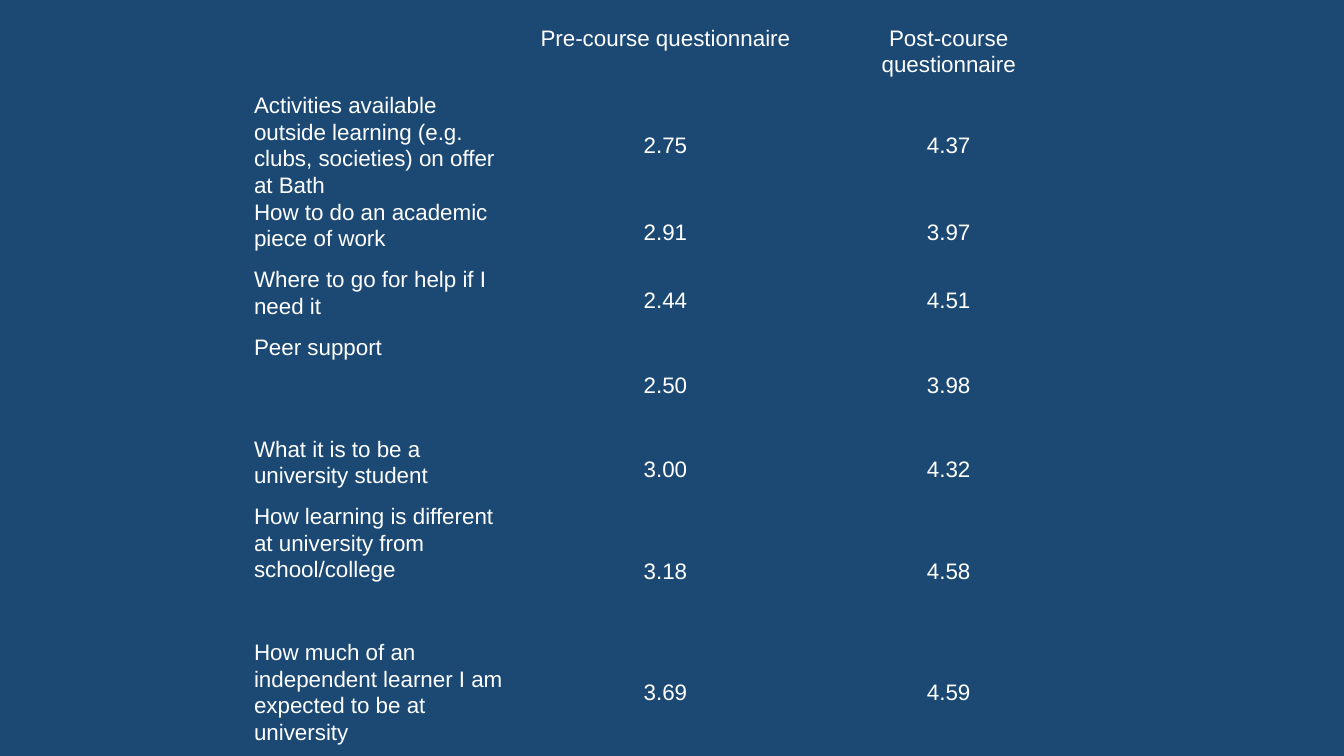
"""Build the slide comparing pre-course and post-course questionnaire scores."""
import pptx
import pptx.dml.color
import pptx.enum.text
import pptx.util

Inches = pptx.util.Inches
ALIGN = pptx.enum.text.PP_ALIGN
ANCHOR = pptx.enum.text.MSO_ANCHOR
NAVY = pptx.dml.color.RGBColor(0x1B, 0x49, 0x74)
WHITE = pptx.dml.color.RGBColor(0xFF, 0xFF, 0xFF)
NO_STYLE_NO_GRID = "{2D5ABB26-0587-4C30-8999-92F81FD0307C}"

COLUMN_WIDTH = 2.81
SCORES = [
    ("", "Pre-course questionnaire", "Post-course questionnaire"),
    ("Activities available outside learning (e.g. clubs, societies) on offer at Bath", "2.75", "4.37"),
    ("How to do an academic piece of work", "2.91", "3.97"),
    ("Where to go for help if I need it", "2.44", "4.51"),
    ("Peer support", "2.50", "3.98"),
    ("What it is to be a university student", "3.00", "4.32"),
    ("How learning is different at university from school/college", "3.18", "4.58"),
    ("How much of an independent learner I am expected to be at university", "3.69", "4.59"),
]
ROW_HEIGHTS = [0.67, 1.06, 0.67, 0.67, 1.01, 0.67, 1.35, 1.06]


def write_cell(cell, text, align=ALIGN.LEFT, anchor=ANCHOR.TOP):
    cell.fill.background()
    cell.margin_left, cell.margin_right = Inches(0.07), Inches(0.2)
    cell.margin_top = cell.margin_bottom = 0
    cell.vertical_anchor = anchor
    paragraph = cell.text_frame.paragraphs[0]
    paragraph.text = text
    paragraph.alignment = align
    paragraph.line_spacing = 1.07
    paragraph.space_after = pptx.util.Pt(8)
    paragraph.font.name = "Arial"
    paragraph.font.size = pptx.util.Pt(16)
    paragraph.font.color.rgb = WHITE


deck = pptx.Presentation()
deck.slide_width, deck.slide_height = Inches(13.33), Inches(7.5)
slide = deck.slides.add_slide(deck.slide_layouts[6])
slide.background.fill.solid()
slide.background.fill.fore_color.rgb = NAVY

score_frame = slide.shapes.add_table(
    len(SCORES), 3, Inches(2.45), Inches(0.24),
    Inches(3 * COLUMN_WIDTH), Inches(sum(ROW_HEIGHTS)))
score_table = score_frame.table
score_table.first_row = score_table.horz_banding = False
for style_id in score_frame.element.xpath(".//a:tableStyleId"):
    style_id.text = NO_STYLE_NO_GRID
for column in score_table.columns:
    column.width = Inches(COLUMN_WIDTH)

for row_index, (entries, height) in enumerate(zip(SCORES, ROW_HEIGHTS)):
    score_table.rows[row_index].height = Inches(height)
    for column_index, entry in enumerate(entries):
        is_score = row_index > 0 and column_index > 0
        write_cell(score_table.cell(row_index, column_index), entry,
                   align=ALIGN.CENTER if column_index else ALIGN.LEFT,
                   anchor=ANCHOR.MIDDLE if is_score else ANCHOR.TOP)

deck.save("out.pptx")
